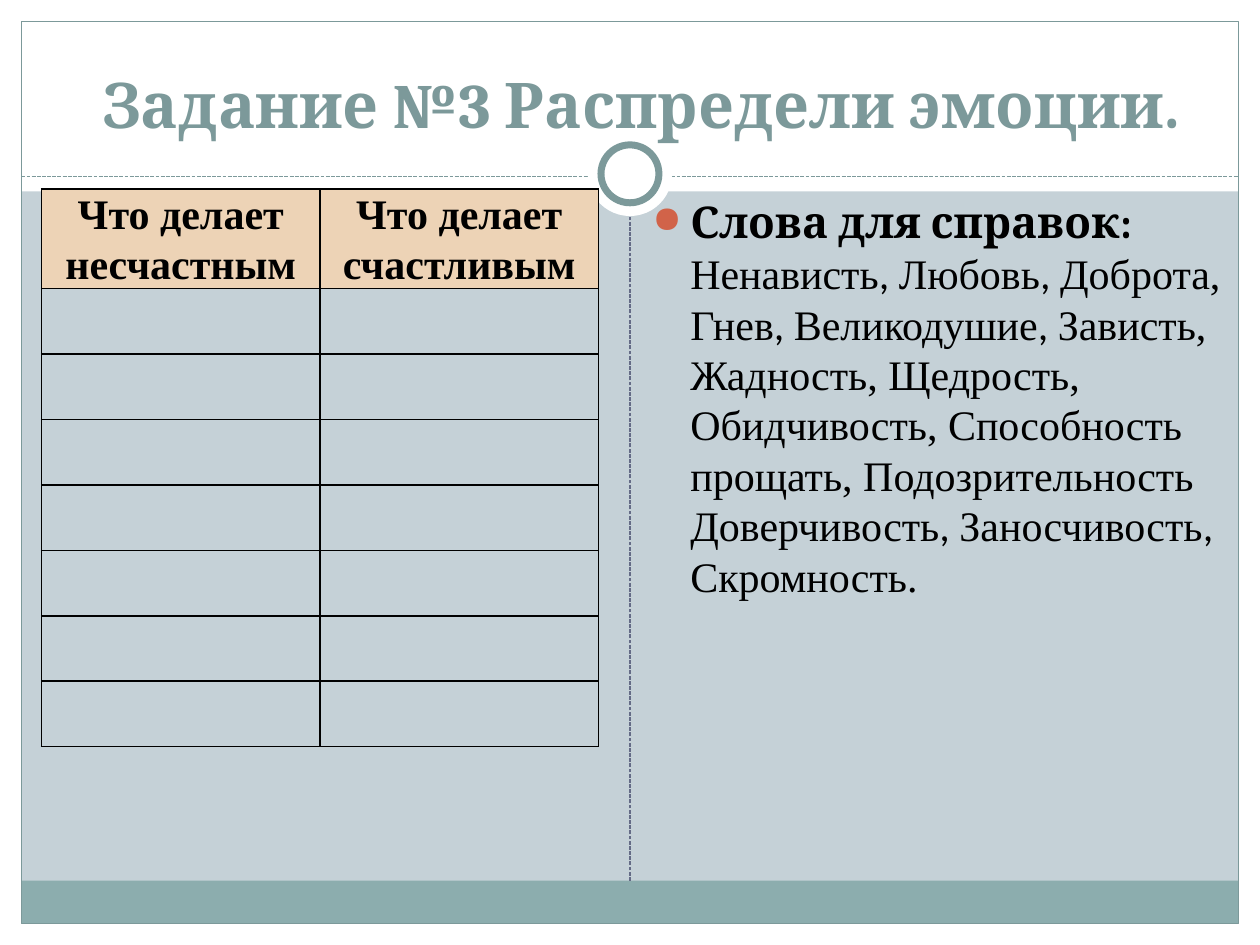
from lxml.etree import SubElement as Sub
from pptx import Presentation
from pptx.dml.color import RGBColor
from pptx.enum.dml import MSO_LINE as Dash
from pptx.enum.shapes import MSO_CONNECTOR as Conn, MSO_SHAPE as Kind
from pptx.enum.text import MSO_ANCHOR as Anchor, PP_ALIGN as Align
from pptx.oxml.ns import qn
from pptx.util import Inches, Pt

WHITE = RGBColor(0xFF, 0xFF, 0xFF)
BLACK = RGBColor(0, 0, 0)
BACK = RGBColor(0xC5, 0xD1, 0xD7)
TEAL = RGBColor(0x7C, 0x99, 0x9A)
FOOT = RGBColor(0x8C, 0xAD, 0xAE)
SLATE = RGBColor(0x64, 0x6B, 0x86)
SAND = RGBColor(0xED, 0xD3, 0xB6)
RUST = RGBColor(0xD1, 0x63, 0x49)

HEAD, BODY, COMMA = "Cambria", "Times New Roman", "Calibri"
WIDE, HIGH, EDGE = 10, 7.5, 0.17
MID, RULE = WIDE / 2, 1.4
ROWS, COLS = 8, 2

TITLE = "Задание №3 Распредели эмоции."
LABELS = ["Что делает несчастным", "Что делает счастливым"]
INTRO = "Слова для справок: "
# Groups of words; the commas between groups have their own font
WORDS = [
    "Ненависть", "Любовь", "Доброта, Гнев", "Великодушие",
    "Зависть, Жадность, Щедрость, Обидчивость, Способность прощать, "
    "Подозрительность Доверчивость",
    "Заносчивость", "Скромность.",
]


def style(font, name, size, color=BLACK, bold=False):
    font.name, font.size, font.bold = name, Pt(size), bold
    font.color.rgb = color


def add_form(slide, box, fill=None, line=None, width=0.75, kind=Kind.RECTANGLE):
    form = slide.shapes.add_shape(kind, *map(Inches, box))
    form.shadow.inherit = False
    if fill is None:
        form.fill.background()
    else:
        form.fill.solid()
        form.fill.fore_color.rgb = fill
    if line is None:
        form.line.fill.background()
    else:
        form.line.color.rgb = line
        form.line.width = Pt(width)


def add_ring(slide, size, line=None):
    box = (MID - size / 2, RULE - 0.02 - size / 2, size, size)
    add_form(slide, box, WHITE, line, 4, Kind.OVAL)


def add_dash(slide, start, end, color):
    line = slide.shapes.add_connector(Conn.STRAIGHT, *map(Inches, start + end))
    line.line.color.rgb = color
    line.line.width = Pt(0.75)
    line.line.dash_style = Dash.SQUARE_DOT
    Sub(line._element.spPr, qn("a:effectLst"))


def add_frame(slide):
    inner = WIDE - 2 * EDGE
    foot = HIGH - 3 * EDGE
    # White margins and title band
    for box in [(0, HIGH - EDGE, WIDE, EDGE), (0, 0, WIDE, 1.52),
                (0, 0, EDGE, HIGH), (WIDE - EDGE, 0, EDGE, HIGH)]:
        add_form(slide, box, WHITE)
    # Bottom band, outline, rules and ring
    add_form(slide, (EDGE, foot, inner, 2 * EDGE), FOOT)
    add_form(slide, (EDGE, EDGE, inner, HIGH - 2 * EDGE), line=TEAL)
    add_dash(slide, (EDGE, RULE), (WIDE - EDGE, RULE), TEAL)
    add_ring(slide, 0.67)
    add_ring(slide, 0.46, TEAL)
    add_dash(slide, (MID, foot), (MID, 1.72), SLATE)


def set_title(slide):
    title = slide.shapes.title
    title.left, title.top, title.width, title.height = map(
        Inches, (0.42, 0, 9.33, 1.17))
    title.text_frame.text = TITLE
    title.text_frame.vertical_anchor = Anchor.BOTTOM
    par = title.text_frame.paragraphs[0]
    par.alignment = Align.CENTER
    style(par.font, HEAD, 36, TEAL, True)
    # Bring the title in front of the white band
    slide.shapes._spTree.append(title._element)


def add_edges(cell):
    props = cell._tc.get_or_add_tcPr()
    for n, side in enumerate(("lnL", "lnR", "lnT", "lnB")):
        line = props.makeelement(qn(f"a:{side}"), {"w": str(Pt(1))})
        props.insert(n, line)
        fill = Sub(line, qn("a:solidFill"))
        Sub(fill, qn("a:srgbClr"), val=str(BLACK))


def add_grid(slide):
    box = map(Inches, (0.33, 1.5, 4.42, 0.52 * ROWS))
    table = slide.shapes.add_table(ROWS, COLS, *box).table
    for cell in table.iter_cells():
        cell.fill.background()
        add_edges(cell)
    for cell, label in zip(table.rows[0].cells, LABELS):
        cell.fill.solid()
        cell.fill.fore_color.rgb = SAND
        cell.margin_left = cell.margin_right = Inches(0.04)
        cell.margin_top = cell.margin_bottom = 0
        cell.text = label
        par = cell.text_frame.paragraphs[0]
        par.alignment = Align.CENTER
        par.line_spacing = 1.07
        style(par.font, BODY, 24, bold=True)


def add_bullet(par):
    props = par._p.get_or_add_pPr()
    props.set("marL", str(Inches(0.3)))
    props.set("indent", str(-Inches(0.3)))
    Sub(Sub(props, qn("a:buClr")), qn("a:srgbClr"), val=str(RUST))
    Sub(props, qn("a:buSzPct"), val="85000")
    Sub(props, qn("a:buChar"), char="●")


def add_run(par, text, *look):
    run = par.add_run()
    run.text = text
    style(run.font, *look)


def add_words(slide):
    box = map(Inches, (5.08, 1.5, 4.75, 5.12))
    frame = slide.shapes.add_textbox(*box).text_frame
    frame.word_wrap = True
    par = frame.paragraphs[0]
    par.space_before = Pt(5)
    add_bullet(par)
    add_run(par, INTRO, HEAD, 25, BLACK, True)
    for n, word in enumerate(WORDS):
        if n:
            add_run(par, ", ", COMMA, 24)
        add_run(par, word, BODY, 24)


def main():
    deck = Presentation()
    deck.slide_width, deck.slide_height = Inches(WIDE), Inches(HIGH)
    slide = deck.slides.add_slide(deck.slide_layouts[5])
    slide.background.fill.solid()
    slide.background.fill.fore_color.rgb = BACK
    add_frame(slide)
    set_title(slide)
    add_grid(slide)
    add_words(slide)
    deck.save("out.pptx")


if __name__ == "__main__":
    main()
